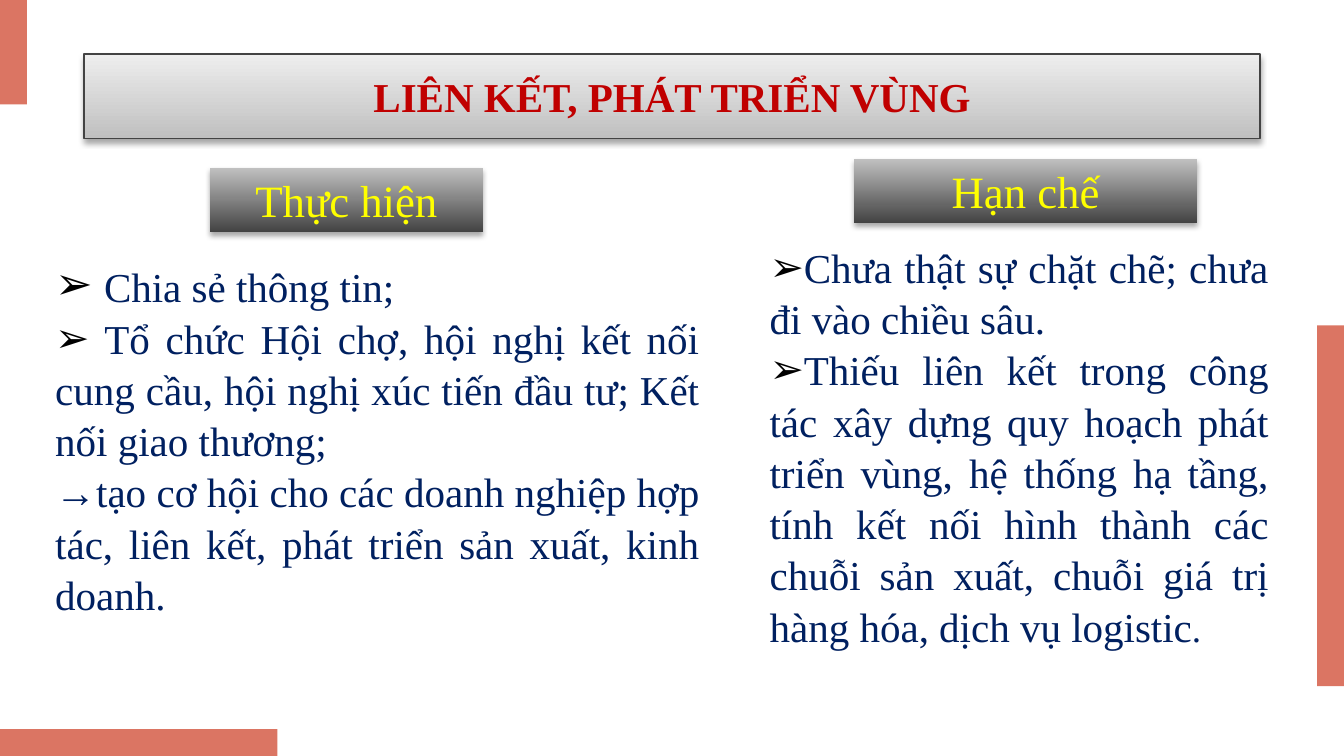
from dataclasses import dataclass

from lxml import etree
from pptx import Presentation
from pptx.dml.color import RGBColor
from pptx.enum.shapes import MSO_SHAPE
from pptx.enum.text import MSO_ANCHOR, PP_ALIGN
from pptx.oxml import parse_xml
from pptx.oxml.ns import nsdecls, qn
from pptx.util import Pt

RECT = MSO_SHAPE.RECTANGLE
CENTER, JUSTIFY = PP_ALIGN.CENTER, PP_ALIGN.JUSTIFY
TOP, MIDDLE = MSO_ANCHOR.TOP, MSO_ANCHOR.MIDDLE

CORAL = RGBColor(0xDB, 0x75, 0x63)
RED = RGBColor(0xC0, 0x00, 0x00)
YELLOW = RGBColor(0xFF, 0xFF, 0x00)
NAVY = RGBColor(0x00, 0x20, 0x60)
CHARCOAL = RGBColor(0x43, 0x43, 0x43)
SILVER = RGBColor(0xC0, 0xC0, 0xC0)
PALE = RGBColor(0xEE, 0xEE, 0xEE)

FONT = "Times New Roman"
INSET = 7.2
LINE_SPACING = 1.04


@dataclass
class Box:
    left: float
    top: float
    width: float
    height: float

    def lengths(self) -> list:
        return [Pt(v) for v in (self.left, self.top, self.width, self.height)]


@dataclass
class Banner:
    box: Box
    text: str
    bottom: RGBColor
    top: RGBColor
    font: dict
    outlined: bool = False


@dataclass
class Run:
    text: str
    size: float = 22


@dataclass
class Paragraph:
    runs: list[Run]
    bullet: bool = True


@dataclass
class Column:
    box: Box
    paragraphs: list[Paragraph]


BARS = [
    Box(0, 0, 14.4, 56),
    Box(0, 390.6, 148.6, 14.4),
    Box(705.6, 174.4, 14.4, 193.2),
]

HEADING = {"size": Pt(24), "color": YELLOW}
BANNERS = [
    Banner(Box(45, 29, 630, 45.2), "LIÊN KẾT, PHÁT TRIỂN VÙNG", SILVER, PALE,
           {"size": Pt(22), "bold": True, "color": RED}, outlined=True),
    Banner(Box(112.5, 90, 146.2, 34.4), "Thực hiện", CHARCOAL, SILVER, HEADING),
    Banner(Box(457.6, 85, 183.6, 34.4), "Hạn chế", CHARCOAL, SILVER, HEADING),
]

COLUMNS = [
    Column(Box(22.5, 129.6, 359.3, 215.3), [
        Paragraph([Run(" ", 24), Run("Chia sẻ thông tin;")]),
        Paragraph([Run(" Tổ chức Hội chợ, hội nghị kết nối cung cầu, hội nghị "
                       "xúc tiến đầu tư; Kết nối giao thương;")]),
        Paragraph([Run("→tạo cơ hội cho các doanh nghiệp hợp tác, liên kết, "
                       "phát triển sản xuất, kinh doanh.")], bullet=False),
    ]),
    Column(Box(405.2, 121.7, 281.5, 249.1), [
        Paragraph([Run("Chưa thật sự chặt chẽ; chưa đi vào chiều sâu.")]),
        Paragraph([Run("Thiếu liên kết trong công tác xây dựng quy hoạch phát "
                       "triển vùng, hệ thống hạ tầng, tính kết nối hình thành "
                       "các chuỗi sản xuất, chuỗi giá trị hàng hóa, dịch vụ "
                       "logistic"), Run(".", 20)]),
    ]),
]


def set_frame(tf, anchor) -> None:
    frame_format = {"word_wrap": True, "vertical_anchor": anchor}
    for side in ("left", "top", "right", "bottom"):
        frame_format[f"margin_{side}"] = Pt(INSET)
    for name, value in frame_format.items():
        setattr(tf, name, value)


def add_run(p, text: str, font: dict) -> None:
    r = p.add_run()
    r.text = text
    r.font.name = FONT
    for name, value in font.items():
        if name == "color":
            r.font.color.rgb = value
        else:
            setattr(r.font, name, value)


def add_shadow(sp) -> None:
    old = sp._element.spPr.find(qn("a:effectLst"))
    if old is not None:
        sp._element.spPr.remove(old)
    sp._element.spPr.append(parse_xml(
        f'<a:effectLst {nsdecls("a")}>'
        f'<a:outerShdw blurRad="{Pt(3.1)}" dist="{Pt(1.8)}" dir="5400000" '
        'rotWithShape="0"><a:srgbClr val="000000"><a:alpha val="35000"/>'
        '</a:srgbClr></a:outerShdw></a:effectLst>'))


def add_bullet(p) -> None:
    pPr = p._p.get_or_add_pPr()
    pPr.set("marL", "0")
    pPr.set("indent", "0")
    color = etree.SubElement(pPr, qn("a:buClr"))
    etree.SubElement(color, qn("a:srgbClr"), val="000000")
    etree.SubElement(pPr, qn("a:buFont"), typeface="Arial")
    etree.SubElement(pPr, qn("a:buChar"), char="➢")


def draw_bar(s, box: Box) -> None:
    sp = s.shapes.add_shape(RECT, *box.lengths())
    sp.shadow.inherit = False
    sp.fill.solid()
    sp.fill.fore_color.rgb = CORAL
    sp.line.fill.background()


def draw_banner(s, banner: Banner) -> None:
    sp = s.shapes.add_shape(RECT, *banner.box.lengths())
    sp.fill.gradient()
    sp.fill.gradient_angle = 90
    for stop, color in zip(sp.fill.gradient_stops, (banner.bottom, banner.top)):
        stop.color.rgb = color
    if banner.outlined:
        sp.line.color.rgb = CHARCOAL
        sp.line.width = Pt(0.75)
    else:
        sp.line.fill.background()
    add_shadow(sp)
    set_frame(sp.text_frame, MIDDLE)
    p = sp.text_frame.paragraphs[0]
    p.alignment = CENTER
    add_run(p, banner.text, banner.font)


def draw_column(s, column: Column) -> None:
    tf = s.shapes.add_textbox(*column.box.lengths()).text_frame
    set_frame(tf, TOP)
    for i, paragraph in enumerate(column.paragraphs):
        p = tf.add_paragraph() if i else tf.paragraphs[0]
        p.alignment = JUSTIFY
        p.line_spacing = LINE_SPACING
        if paragraph.bullet:
            add_bullet(p)
        for run in paragraph.runs:
            add_run(p, run.text, {"size": Pt(run.size), "color": NAVY})


def main() -> None:
    prs = Presentation()
    prs.slide_width, prs.slide_height = Pt(720), Pt(405)
    s = prs.slides.add_slide(prs.slide_layouts[6])
    for box in BARS:
        draw_bar(s, box)
    for banner in BANNERS:
        draw_banner(s, banner)
    for column in COLUMNS:
        draw_column(s, column)
    prs.save("out.pptx")


if __name__ == "__main__":
    main()
